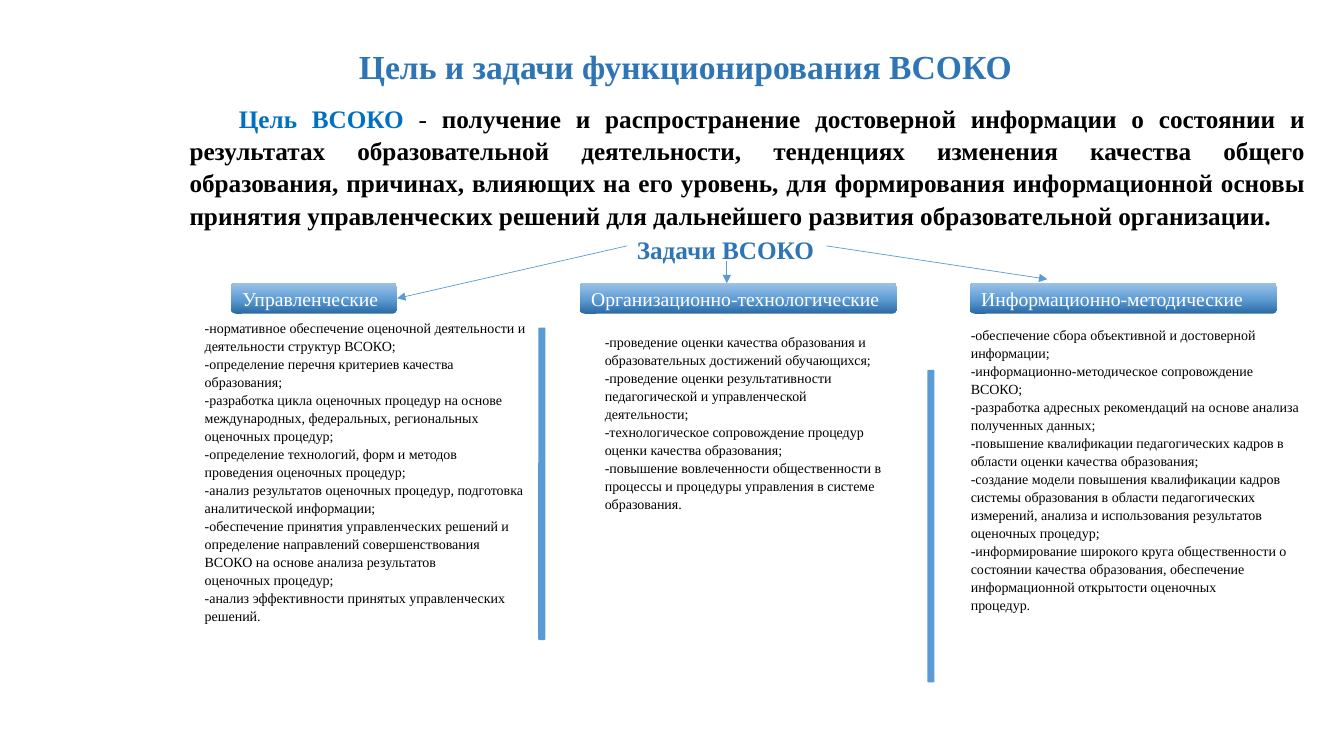
import copy

import pptx
import pptx.dml.color
import pptx.enum.dml
import pptx.enum.shapes
import pptx.enum.text
import pptx.oxml.ns
import pptx.util
from lxml import etree

RGBColor = pptx.dml.color.RGBColor
BLACK = RGBColor(0x00, 0x00, 0x00)
WHITE = RGBColor(0xFF, 0xFF, 0xFF)
HEADING_BLUE = RGBColor(0x2E, 0x75, 0xB6)
GOAL_BLUE = RGBColor(0x00, 0x70, 0xC0)
LINE_BLUE = RGBColor(0x5B, 0x9B, 0xD5)
BANNER_STOPS = [
    (0, RGBColor(0x2A, 0x69, 0xA2)),
    (0.48, RGBColor(0x60, 0x9E, 0xD6)),
    (1, RGBColor(0x9D, 0xC3, 0xE6)),
]
FONT = "Times New Roman"
SLIDE_WIDTH = pptx.util.Inches(13.33)
SLIDE_HEIGHT = pptx.util.Inches(7.5)
ROUNDED = pptx.enum.shapes.MSO_SHAPE.ROUNDED_RECTANGLE
ALIGN = pptx.enum.text.PP_ALIGN
ANCHOR = pptx.enum.text.MSO_ANCHOR
LINE_SPACING = 1.07

GOAL = (
    "получение и распространение достоверной информации о состоянии и "
    "результатах образовательной деятельности, тенденциях изменения качества "
    "общего образования, причинах, влияющих на его уровень, для формирования "
    "информационной основы принятия управленческих решений для дальнейшего "
    "развития образовательной организации."
)

# Banner name, banner (left, width), list area, tasks; areas in percent of the slide
TASK_GROUPS = [
    ("Управленческие", (17.18, 12.38), (14.48, 41.47, 25.58, 44.53), [
        "-нормативное обеспечение оценочной деятельности и деятельности структур ВСОКО;",
        "-определение перечня критериев качества образования;",
        "-разработка цикла оценочных процедур на основе международных, федеральных, "
        "региональных оценочных процедур;",
        "-определение технологий, форм и методов проведения оценочных процедур;",
        "-анализ результатов оценочных процедур, подготовка аналитической информации;",
        "-обеспечение принятия управленческих решений и определение направлений "
        "совершенствования ВСОКО на основе анализа результатов",
        "оценочных процедур;",
        "-анализ эффективности принятых управленческих решений.",
    ]),
    ("Организационно-технологические", (43.13, 23.63), (44.25, 43.33, 22.73, 25.33), [
        "-проведение оценки качества образования и образовательных достижений обучающихся;",
        "-проведение оценки результативности педагогической и управленческой деятельности;",
        "-технологическое сопровождение процедур оценки качества образования;",
        "-повышение вовлеченности общественности в процессы и процедуры управления "
        "в системе образования.",
    ]),
    ("Информационно-методические", (72.15, 22.88), (71.48, 42.4, 26.48, 39.73), [
        "-обеспечение сбора объективной и достоверной информации;",
        "-информационно-методическое сопровождение ВСОКО;",
        "-разработка адресных рекомендаций на основе анализа полученных данных;",
        "-повышение квалификации педагогических кадров в области оценки качества образования;",
        "-создание модели повышения квалификации кадров системы образования в области "
        "педагогических измерений, анализа и использования результатов оценочных процедур;",
        "-информирование широкого круга общественности о состоянии качества образования, "
        "обеспечение информационной открытости оценочных",
        "процедур.",
    ]),
]
BANNER_TOP, BANNER_HEIGHT = 37.4, 4.1
DIVIDERS = [(40.05, 43.33), (69, 48.93)]
DIVIDER_WIDTH, DIVIDER_HEIGHT = 0.53, 41.33
ARROWS = [
    (46.65, 32.53, 29.55, 39.47),
    (61.5, 32.53, 77.93, 36.93),
    (54.08, 34.53, 54.08, 37.47),
]


def across(percent):
    return round(SLIDE_WIDTH * percent / 100)


def down(percent):
    return round(SLIDE_HEIGHT * percent / 100)


def lengths(area):
    """Turn four percentages (x, y, x, y) into slide lengths."""
    return across(area[0]), down(area[1]), across(area[2]), down(area[3])


def add_span(para, text, size, color, bold=False):
    span = para.add_run()
    span.text = text
    span.font.name = FONT
    span.font.size = pptx.util.Pt(size)
    span.font.bold = bold
    span.font.color.rgb = color


def fit(box, area, anchor=ANCHOR.TOP):
    """Move a placeholder and fix how its text sits."""
    box.left, box.top, box.width, box.height = lengths(area)
    box.text_frame.auto_size = pptx.enum.text.MSO_AUTO_SIZE.NONE
    box.text_frame.word_wrap = True
    box.text_frame.vertical_anchor = anchor


def format_body(para, align=ALIGN.LEFT, indent=0):
    """Drop the template's bullet and spacing."""
    properties = para._p.get_or_add_pPr()
    properties.set("marL", "0")
    properties.set("indent", str(pptx.util.Inches(indent)))
    etree.SubElement(properties, pptx.oxml.ns.qn("a:buNone"))
    para.alignment = align
    para.line_spacing = LINE_SPACING
    para.space_before = pptx.util.Pt(0)


def fill_title(box):
    fit(box, (13.35, 4.93, 75.3, 7.6), ANCHOR.MIDDLE)
    para = box.text_frame.paragraphs[0]
    para.alignment = ALIGN.CENTER
    add_span(para, "Цель и задачи функционирования ВСОКО", 24, HEADING_BLUE, True)


def fill_goal(box):
    fit(box, (13.35, 12.67, 84.52, 18.67))
    para = box.text_frame.paragraphs[0]
    format_body(para, ALIGN.JUSTIFY, 0.49)
    add_span(para, "Цель ВСОКО ", 18, GOAL_BLUE, True)
    add_span(para, "- ", 18, BLACK)
    add_span(para, GOAL, 18, BLACK, True)


def fill_list(box, area, tasks):
    fit(box, area)
    frame = box.text_frame
    for number, task in enumerate(tasks):
        para = frame.add_paragraph() if number else frame.paragraphs[0]
        format_body(para)
        add_span(para, task, 10, BLACK)


def add_tasks_heading(page):
    box = page.shapes.add_textbox(*lengths((46.65, 30.4, 14.85, 5.33)))
    box.text_frame.word_wrap = False
    add_span(box.text_frame.paragraphs[0], "Задачи ВСОКО", 18, HEADING_BLUE, True)


def add_bar(page, area):
    bar = page.shapes.add_shape(ROUNDED, *lengths(area))
    bar.shadow.inherit = False
    bar.line.fill.background()
    bar.fill.solid()
    bar.fill.fore_color.rgb = LINE_BLUE
    return bar


def add_banner(page, name, left, width):
    banner = add_bar(page, (left, BANNER_TOP, width, BANNER_HEIGHT))
    banner.fill.gradient()
    banner.fill.gradient_angle = 90
    stop_list = banner._element.spPr.find(".//" + pptx.oxml.ns.qn("a:gsLst"))
    stop_list.append(copy.deepcopy(stop_list[0]))
    for stop, (position, color) in zip(banner.fill.gradient_stops, BANNER_STOPS):
        stop.position = position
        stop.color.rgb = color
    banner.text_frame.word_wrap = True
    banner.text_frame.vertical_anchor = ANCHOR.MIDDLE
    para = banner.text_frame.paragraphs[0]
    para.alignment = ALIGN.LEFT
    add_span(para, name, 14, WHITE)


def add_arrow(page, ends):
    straight = pptx.enum.shapes.MSO_CONNECTOR.STRAIGHT
    arrow = page.shapes.add_connector(straight, *lengths(ends))
    arrow.line.color.rgb = LINE_BLUE
    arrow.line.width = pptx.util.Pt(0.5)
    outline = arrow.line._get_or_add_ln()
    etree.SubElement(outline, pptx.oxml.ns.qn("a:tailEnd"), type="triangle")
    etree.SubElement(arrow._element.spPr, pptx.oxml.ns.qn("a:effectLst"))


def main():
    deck = pptx.Presentation()
    deck.slide_width, deck.slide_height = SLIDE_WIDTH, SLIDE_HEIGHT
    comparison_layout = deck.slide_layouts[4]
    page = deck.slides.add_slide(comparison_layout)
    title, goal, *lists = page.placeholders
    fill_title(title)
    fill_goal(goal)
    add_tasks_heading(page)
    for box, (name, banner, area, tasks) in zip(lists, TASK_GROUPS):
        add_banner(page, name, *banner)
        fill_list(box, area, tasks)
    for left, top in DIVIDERS:
        add_bar(page, (left, top, DIVIDER_WIDTH, DIVIDER_HEIGHT))
    for ends in ARROWS:
        add_arrow(page, ends)
    deck.save("out.pptx")


if __name__ == "__main__":
    main()
